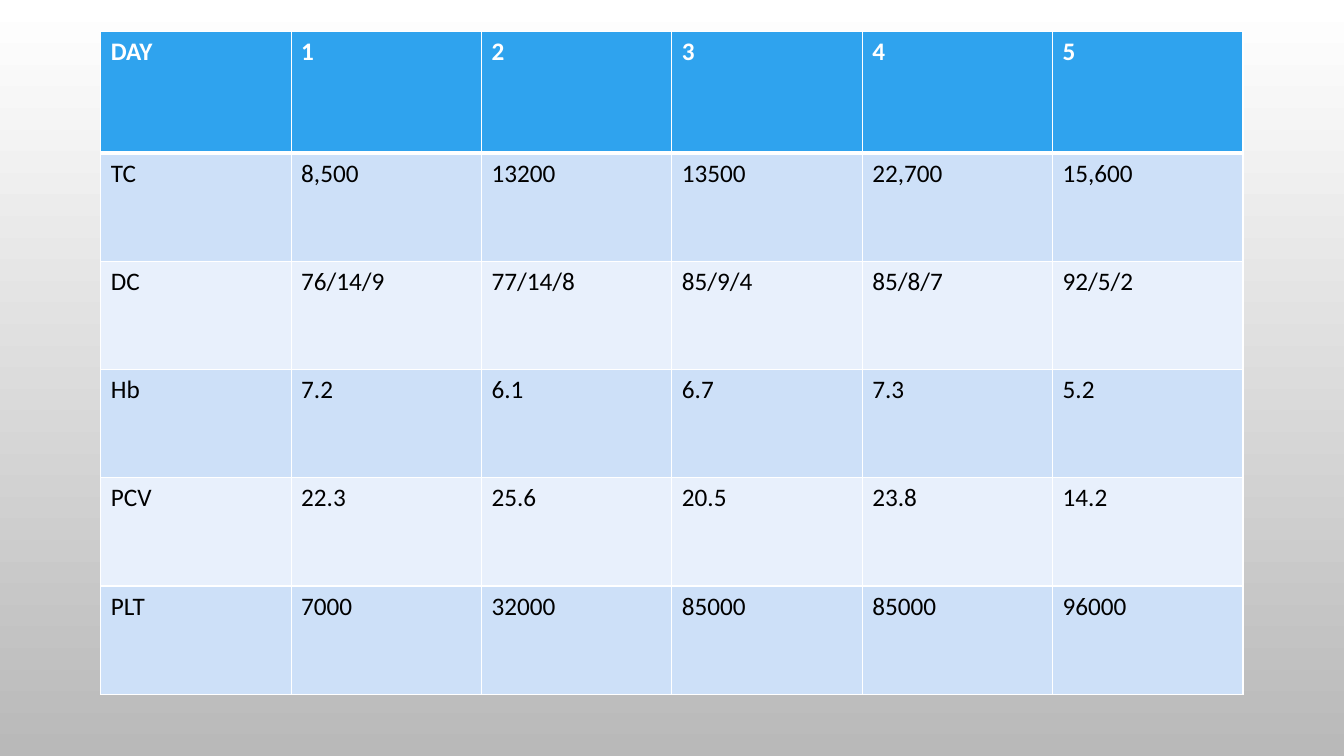
import lxml.etree
import pptx
import pptx.dml.color
import pptx.oxml.ns
import pptx.util

Pt = pptx.util.Pt
RGBColor = pptx.dml.color.RGBColor

WHITE = RGBColor(0xFF, 0xFF, 0xFF)
BLACK = RGBColor(0x00, 0x00, 0x00)
GREY = RGBColor(0xB9, 0xB9, 0xB9)
HEADER_BLUE = RGBColor(0x2F, 0xA3, 0xEE)
BAND_BLUES = (RGBColor(0xCD, 0xE0, 0xF8), RGBColor(0xE8, 0xF0, 0xFC))

HEADER_HEIGHT = 87
BLOOD_COUNTS = [
    ["DAY", "1", "2", "3", "4", "5"],
    ["TC", "8,500", "13200", "13500", "22,700", "15,600"],
    ["DC", "76/14/9", "77/14/8", "85/9/4", "85/8/7", "92/5/2"],
    ["Hb", "7.2", "6.1", "6.7", "7.3", "5.2"],
    ["PCV", "22.3", "25.6", "20.5", "23.8", "14.2"],
    ["PLT", "7000", "32000", "85000", "85000", "96000"],
]


def paint_background(slide):
    """Fade the slide from white at the top to grey at the bottom."""
    fill = slide.background.fill
    fill.gradient()
    fill.gradient_angle = 270
    for stop, color in zip(fill.gradient_stops, (WHITE, GREY)):
        stop.color.rgb = color


def add_borders(cell, widths):
    """Draw white cell borders with the given width in points for each side."""
    properties = cell._tc.get_or_add_tcPr()
    qn = pptx.oxml.ns.qn
    for side, width in widths.items():
        line = lxml.etree.SubElement(properties, qn(f"a:ln{side}"), w=str(Pt(width)))
        solid = lxml.etree.SubElement(line, qn("a:solidFill"))
        lxml.etree.SubElement(solid, qn("a:srgbClr"), val=str(WHITE))


def format_cell(cell, text, row):
    """Write one table cell in the style of its row."""
    header = row == 0
    add_borders(cell, {"L": 1, "R": 1, "T": 3 if row == 1 else 1, "B": 3 if header else 1})
    cell.fill.solid()
    cell.fill.fore_color.rgb = HEADER_BLUE if header else BAND_BLUES[(row - 1) % 2]
    cell.text = text
    font = cell.text_frame.paragraphs[0].runs[0].font
    for name, value in {"name": "Calibri", "size": Pt(18), "bold": header}.items():
        setattr(font, name, value)
    font.color.rgb = WHITE if header else BLACK


def add_blood_counts(slide, left, top, width, height):
    """Place the table of daily blood counts in the given box."""
    row_count, day_columns = len(BLOOD_COUNTS), len(BLOOD_COUNTS[0])
    table = slide.shapes.add_table(
        row_count, day_columns, Pt(left), Pt(top), Pt(width), Pt(height)
    ).table
    for column in table.columns:
        column.width = Pt(width / day_columns)
    for row, values in enumerate(BLOOD_COUNTS):
        count_height = (height - HEADER_HEIGHT) / (row_count - 1)
        table.rows[row].height = Pt(count_height if row else HEADER_HEIGHT)
        for column, text in enumerate(values):
            format_cell(table.cell(row, column), text, row)


def main():
    """Build the slide and save it."""
    presentation = pptx.Presentation()
    presentation.slide_width, presentation.slide_height = Pt(960), Pt(540)
    slide = presentation.slides.add_slide(presentation.slide_layouts[6])
    paint_background(slide)
    add_blood_counts(slide, 72, 22.5, 816, 473.5)
    presentation.save("out.pptx")


if __name__ == "__main__":
    main()
